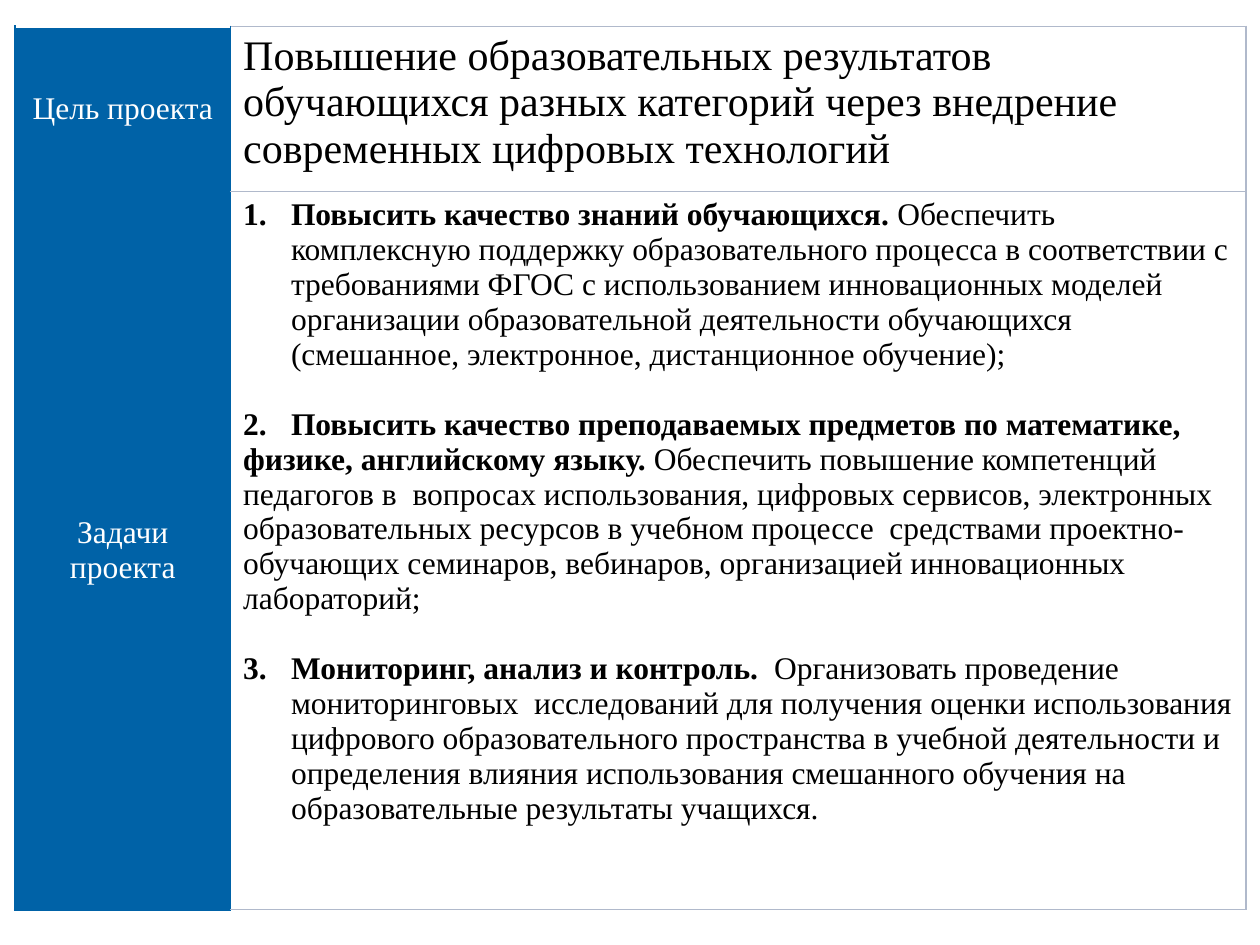
from dataclasses import dataclass

from lxml import etree
from pptx import Presentation
from pptx.dml.color import RGBColor
from pptx.enum.text import MSO_ANCHOR, PP_ALIGN
from pptx.oxml.ns import qn
from pptx.util import Inches, Pt

CENTER, LEFT = PP_ALIGN.CENTER, PP_ALIGN.LEFT
MIDDLE, TOP = MSO_ANCHOR.MIDDLE, MSO_ANCHOR.TOP


@dataclass(frozen=True)
class Theme:
    font: str = "Times New Roman"
    blue: str = "0062A7"
    white: str = "FFFFFF"
    black: str = "000000"
    grid: str = "B0B9CB"
    goal: int = 24
    body: int = 18
    gap: int = 20


theme = Theme()


def add_run(para, text, size, color, bold=False):
    run = para.add_run()
    run.text = text
    font = run.font
    font.name, font.size, font.bold = theme.font, Pt(size), bold
    font.color.rgb = RGBColor.from_string(color)


def style_cell(cell, fill, anchor, edges):
    cell.fill.solid()
    cell.fill.fore_color.rgb = RGBColor.from_string(fill)
    cell.vertical_anchor = anchor
    props = cell._tc.get_or_add_tcPr()
    # Border lines come before the fill, in the order left, right, top, bottom
    for i, (side, (color, width)) in enumerate(zip("LRTB", edges)):
        line = etree.Element(qn(f"a:ln{side}"), w=str(Pt(width)))
        solid = etree.SubElement(line, qn("a:solidFill"))
        etree.SubElement(solid, qn("a:srgbClr"), val=color)
        props.insert(i, line)


prs = Presentation()
prs.slide_width, prs.slide_height = Inches(10), Inches(7.5)
slide = prs.slides.add_slide(prs.slide_layouts[6])

# Table grid
frame = slide.shapes.add_table(
    2, 2, Inches(0.12), Inches(0.21), Inches(9.77), Inches(7.01))
table = frame.table
table.first_row = table.horz_banding = False
for col, width in zip(table.columns, (1.71, 8.06)):
    col.width = Inches(width)
for row, height in zip(table.rows, (1.31, 5.7)):
    row.height = Inches(height)

# Row heads on blue
heads = [(["Цель проекта"], theme.white), (["Задачи", "проекта"], theme.blue)]
thick, thin, grid = (theme.blue, 1.5), (theme.blue, 1), (theme.grid, 1)
for i, (lines, top) in enumerate(heads):
    cell = table.cell(i, 0)
    style_cell(cell, theme.blue, MIDDLE, (thick, thin, (top, 1.5), thick))
    for j, text in enumerate(lines):
        para = cell.text_frame.add_paragraph() if j else cell.text_frame.paragraphs[0]
        para.alignment = CENTER
        add_run(para, text, theme.body, theme.white)
    style = (thin, grid, grid, grid)
    style_cell(table.cell(i, 1), theme.white, TOP, style)

# Goal
add_run(
    table.cell(0, 1).text_frame.paragraphs[0],
    "Повышение образовательных результатов обучающихся разных категорий "
    "через внедрение современных цифровых технологий",
    theme.goal, theme.black)

# Tasks: start number for a hanging list item (None for plain text), title, details
tasks = [
    (1, "Повысить качество знаний обучающихся.",
     " Обеспечить комплексную поддержку образовательного процесса в соответствии "
     "с требованиями ФГОС с использованием инновационных моделей организации "
     "образовательной деятельности обучающихся (смешанное, электронное, "
     "дистанционное обучение);"),
    (None, "2.\tПовысить качество преподаваемых предметов по математике, физике, "
     "английскому языку.",
     " Обеспечить повышение компетенций педагогов в  вопросах использования, "
     "цифровых сервисов, электронных образовательных ресурсов в учебном процессе  "
     "средствами проектно-обучающих семинаров, вебинаров, организацией "
     "инновационных лабораторий;"),
    (3, "Мониторинг, анализ и контроль.",
     "  Организовать проведение мониторинговых  исследований для получения оценки "
     "использования цифрового образовательного пространства в учебной деятельности "
     "и определения влияния использования смешанного обучения на образовательные "
     "результаты учащихся."),
]
hang = Inches(0.38)
body = table.cell(1, 1).text_frame
for i, (start, title, text) in enumerate(tasks):
    para = body.add_paragraph() if i else body.paragraphs[0]
    para.alignment = LEFT
    if i:
        para.space_before = Pt(theme.gap)
    props = para._p.get_or_add_pPr()
    if start:
        props.set("marL", str(hang))
        props.set("indent", str(-hang))
        etree.SubElement(props, qn("a:buAutoNum"),
                         type="arabicPeriod", startAt=str(start))
    else:
        tabs = etree.SubElement(props, qn("a:tabLst"))
        etree.SubElement(tabs, qn("a:tab"), pos=str(hang), algn="l")
    add_run(para, title, theme.body, theme.black, True)
    add_run(para, text, theme.body, theme.black)

prs.save("out.pptx")
